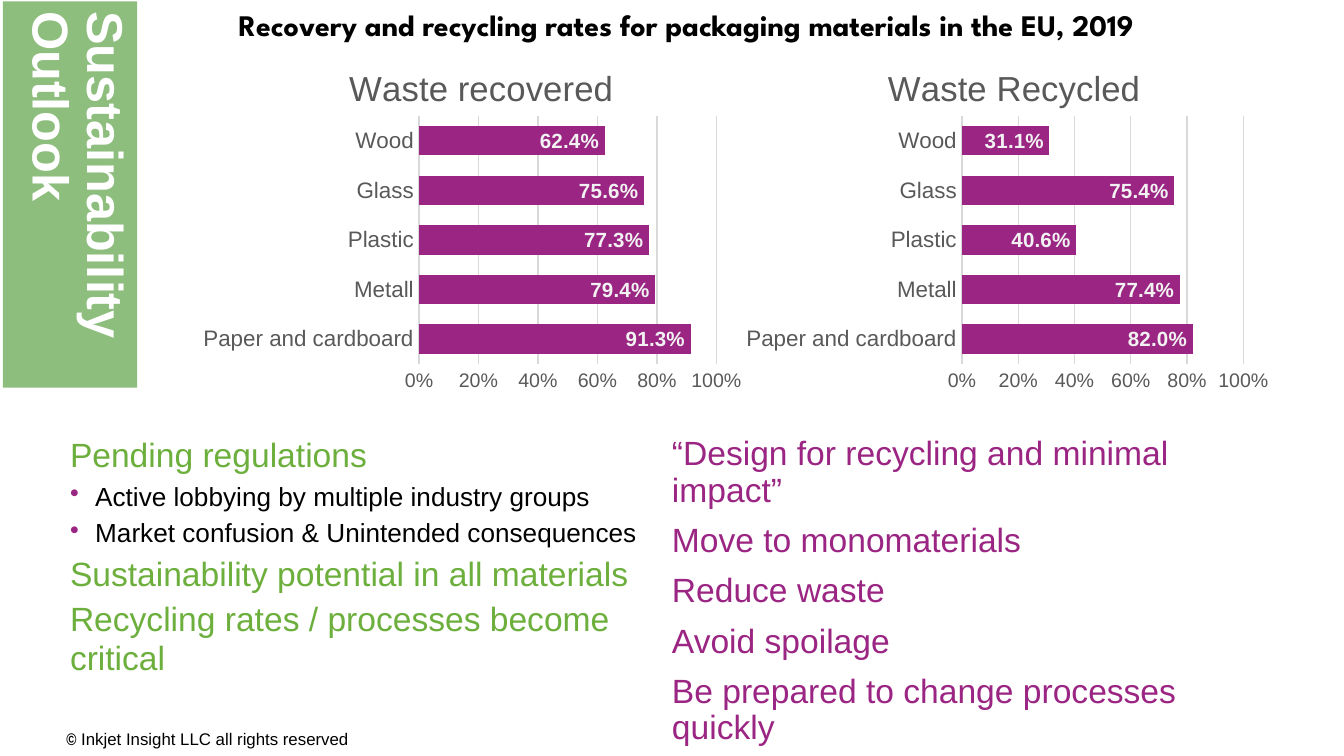
from lxml import etree
from pptx import Presentation
from pptx.chart.data import CategoryChartData
from pptx.dml.color import RGBColor
from pptx.enum.chart import XL_CHART_TYPE as ChartType, XL_LABEL_POSITION as LabelPos
from pptx.enum.chart import XL_TICK_MARK as TickMark
from pptx.enum.shapes import MSO_SHAPE as Shape
from pptx.enum.text import MSO_ANCHOR as Anchor, PP_ALIGN as Align
from pptx.oxml.ns import qn
from pptx.util import Emu, Pt

BLACK = RGBColor(0x00, 0x00, 0x00)
WHITE = RGBColor(0xFF, 0xFF, 0xFF)
GREEN = RGBColor(0x6D, 0xAF, 0x3D)
SAGE = RGBColor(0x8E, 0xBE, 0x7E)
PURPLE = RGBColor(0x9B, 0x25, 0x83)
GRAY = RGBColor(0x59, 0x59, 0x59)
GRID = RGBColor(0xD9, 0xD9, 0xD9)
PALE = RGBColor(0xF2, 0xF2, 0xF2)

MATERIALS = ["Paper and cardboard", "Metall", "Plastic", "Glass", "Wood"]
REGULATIONS = [
    ("Pending regulations", False),
    ("Active lobbying by multiple industry groups", True),
    ("Market confusion & Unintended consequences", True),
    ("Sustainability potential in all materials", False),
    ("Recycling rates / processes become critical", False),
]
ACTIONS = [
    "“Design for recycling and minimal impact”",
    "Move to monomaterials",
    "Reduce waste",
    "Avoid spoilage",
    "Be prepared to change processes quickly",
]


def px(n):
    """Turn pixels into EMU."""
    return Emu(n * 9525)


def set_font(font, size, color, bold=False, name="Arial"):
    """Set size, colour, weight and typeface of a font."""
    font.size, font.bold, font.name = Pt(size), bold, name
    font.color.rgb = color


def add_run(p, text, size=18, color=BLACK, bold=False, name="Arial"):
    """Append a formatted run to a paragraph."""
    r = p.add_run()
    r.text = text
    set_font(r.font, size, color, bold, name)


def add_box(s, x, y, w, h, inset=True):
    """Add a wrapping text box and return its text frame."""
    tf = s.shapes.add_textbox(px(x), px(y), px(w), px(h)).text_frame
    tf.word_wrap = True
    if not inset:
        tf.margin_left = tf.margin_right = tf.margin_top = tf.margin_bottom = 0
    return tf


def add_line(tf, text, first, spacing=0.95, before=3.8, bullet=False, **fmt):
    """Add one paragraph of body text, bulleted if asked."""
    p = tf.paragraphs[0] if first else tf.add_paragraph()
    p.line_spacing = spacing
    p.space_before = Pt(0 if first else before)
    if bullet:
        pPr = p._p.get_or_add_pPr()
        pPr.set("marL", str(px(18)))
        pPr.set("indent", str(px(-18)))
        clr = etree.SubElement(pPr, qn("a:buClr"))
        etree.SubElement(clr, qn("a:srgbClr"), val=str(PURPLE))
        etree.SubElement(pPr, qn("a:buChar"), char="•")
    add_run(p, text, **fmt)


def add_banner(s, text):
    """Add the rotated title banner."""
    sp = s.shapes.add_shape(Shape.RECTANGLE, px(-88), px(91), px(276), px(96))
    sp.rotation = 90
    sp.shadow.inherit = False
    sp.fill.solid()
    sp.fill.fore_color.rgb = SAGE
    sp.line.fill.background()
    tf = sp.text_frame
    tf.word_wrap = True
    tf.vertical_anchor = Anchor.TOP
    tf.margin_left, tf.margin_right = px(7), 0
    p = tf.paragraphs[0]
    p.alignment = Align.LEFT
    p.line_spacing = 0.9
    add_run(p, text, size=27, color=WHITE, bold=True)


def set_layout(parent, index, **fractions):
    """Place a chart part by fractions of the chart area."""
    layout = parent.find(qn("c:layout"))
    if layout is not None:
        parent.remove(layout)
    layout = etree.Element(qn("c:layout"))
    manual = etree.SubElement(layout, qn("c:manualLayout"))
    if "w" in fractions:
        etree.SubElement(manual, qn("c:layoutTarget"), val="inner")
    for key in ("x", "y"):
        etree.SubElement(manual, qn(f"c:{key}Mode"), val="edge")
    for key, value in fractions.items():
        etree.SubElement(manual, qn(f"c:{key}"), val=str(value))
    parent.insert(index, layout)


def style_axis(axis, size):
    """Format the labels of an axis and hide its ticks."""
    axis.major_tick_mark = axis.minor_tick_mark = TickMark.NONE
    set_font(axis.tick_labels.font, size, GRAY)


def add_rates(s, title, values, x, w, plot_x, plot_w):
    """Add a bar chart of rates by material."""
    data = CategoryChartData(number_format="0.0%")
    data.categories = MATERIALS
    data.add_series("Series 1", values)
    chart = s.shapes.add_chart(
        ChartType.BAR_CLUSTERED, px(x), px(24), px(w), px(262), data).chart
    chart.has_legend = False
    set_font(chart.font, 10, BLACK)
    add_run(chart.chart_title.text_frame.paragraphs[0], title, size=18.6, color=GRAY)
    chart.chart_title.include_in_layout = False
    set_layout(chart.chart_title.element, 1, x=0.27, y=0.07)
    plot_area = chart.element.find(".//" + qn("c:plotArea"))
    set_layout(plot_area, 0, x=plot_x, y=0.225, w=plot_w, h=0.676)

    style_axis(chart.category_axis, 12)
    chart.category_axis.format.line.color.rgb = GRID
    chart.category_axis.format.line.width = Pt(0.75)
    axis = chart.value_axis
    style_axis(axis, 10.5)
    axis.minimum_scale, axis.maximum_scale, axis.major_unit = 0, 1, 0.2
    axis.tick_labels.number_format = "0%"
    axis.tick_labels.number_format_is_linked = False
    axis.format.line.fill.background()
    axis.major_gridlines.format.line.color.rgb = GRID
    axis.major_gridlines.format.line.width = Pt(0.75)

    plot = chart.plots[0]
    plot.gap_width = 70
    plot.vary_by_categories = False
    fill = plot.series[0].format.fill
    fill.solid()
    fill.fore_color.rgb = PURPLE
    labels = plot.series[0].data_labels
    labels.show_value = True
    labels.position = LabelPos.INSIDE_END
    labels.number_format = "0.0%"
    labels.number_format_is_linked = False
    set_font(labels.font, 11, PALE, bold=True)


def main():
    """Build the slide and save it."""
    prs = Presentation()
    prs.slide_width, prs.slide_height = px(960), px(540)
    s = prs.slides.add_slide(prs.slide_layouts[6])

    p = add_box(s, 38, 516, 295, 24).paragraphs[0]
    add_run(p, "©", size=9, bold=True, name="Arial Narrow")
    add_run(p, " Inkjet Insight LLC all rights reserved", size=9)

    tf = add_box(s, 50, 312, 408, 190, inset=False)
    for i, (text, bullet) in enumerate(REGULATIONS):
        add_line(tf, text, i == 0, bullet=bullet, size=14 if bullet else 18,
                 color=BLACK if bullet else GREEN)
    tf = add_box(s, 480, 312, 440, 190, inset=False)
    for i, text in enumerate(ACTIONS):
        add_line(tf, text, i == 0, spacing=0.9, before=7.5, color=PURPLE)

    add_banner(s, "Sustainability Outlook")
    add_rates(s, "Waste recovered", [0.913, 0.794, 0.773, 0.756, 0.624],
              137, 400, 0.406, 0.531)
    add_rates(s, "Waste Recycled", [0.82, 0.774, 0.406, 0.754, 0.311],
              525, 388, 0.418, 0.518)
    p = add_box(s, 161, 0, 752, 36).paragraphs[0]
    add_run(p, "Recovery and recycling rates for packaging materials in the EU, 2019",
            size=16, bold=True, name="League Spartan")
    prs.save("out.pptx")


if __name__ == "__main__":
    main()
